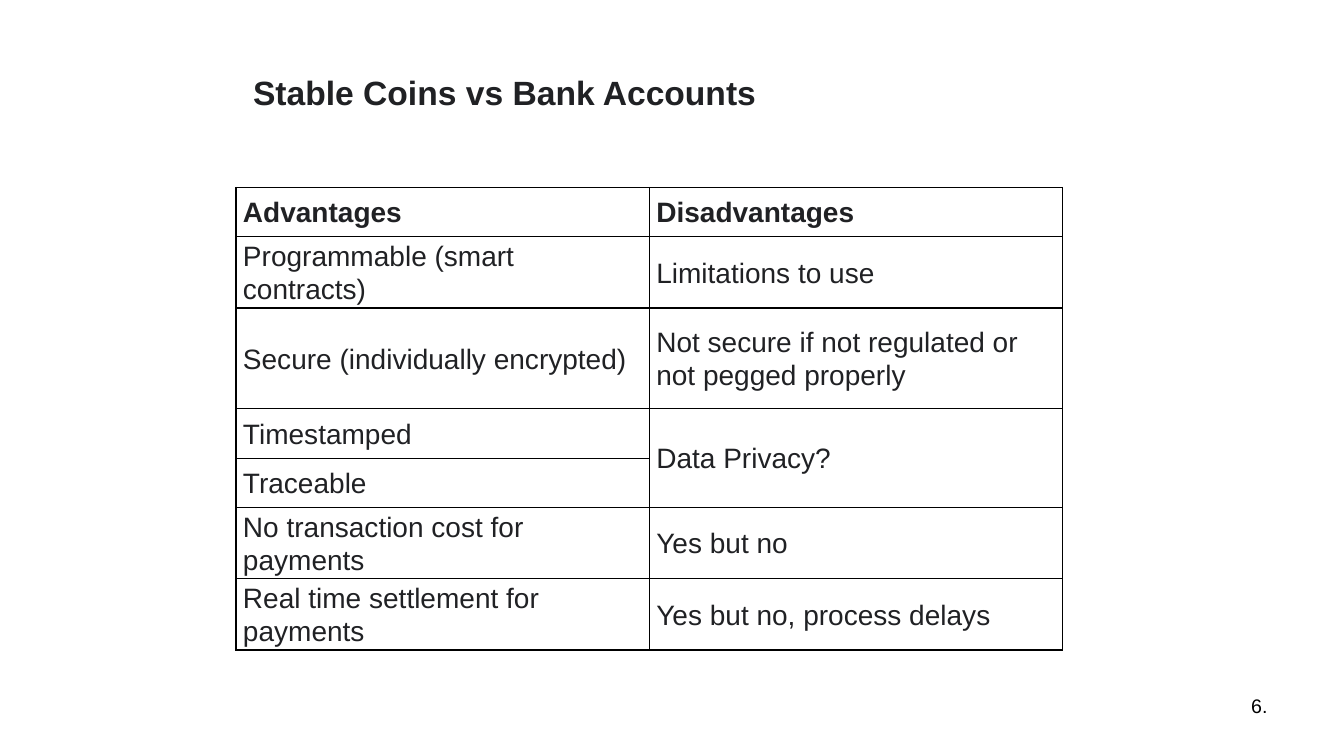
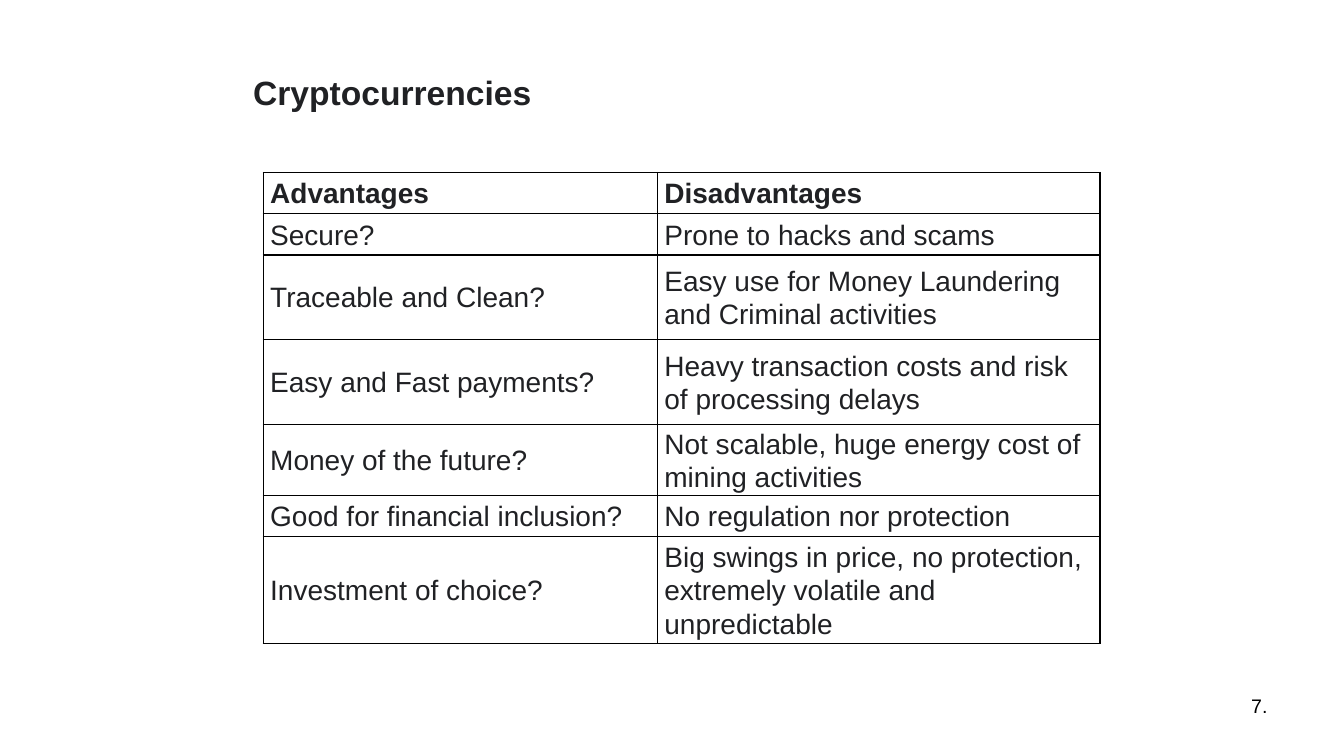
from dataclasses import dataclass

from lxml import etree
from pptx import Presentation
from pptx.dml.color import RGBColor
from pptx.enum.text import MSO_ANCHOR, PP_ALIGN
from pptx.oxml import parse_xml
from pptx.oxml.ns import nsdecls
from pptx.util import Inches, Pt


@dataclass(frozen=True)
class Theme:
    font: str = "Arial"
    ink: str = "202124"
    black: str = "000000"
    title: int = 24
    body: int = 20
    footer: int = 14
    border: int = 1


theme = Theme()

slides = [
    {
        "number": "6.",
        "title": "Stable Coins vs Bank Accounts",
        "at": (2.34, 1.86),
        "cols": (4.1, 4.1),
        "heights": (0.49, 0.49, 1, 0.49, 0.49, 0.49, 0.49),
        "merge": ((3, 1), (4, 1)),
        "rows": [
            ("Advantages", "Disadvantages"),
            ("Programmable (smart contracts)", "Limitations to use"),
            ("Secure (individually encrypted)", "Not secure if not regulated or not pegged properly"),
            ("Timestamped", "Data Privacy?"),
            ("Traceable", ""),
            ("No transaction cost for payments", "Yes but no"),
            ("Real time settlement for payments", "Yes but no, process delays"),
        ],
    },
    {
        "number": "7.",
        "title": "Cryptocurrencies",
        "at": (2.61, 1.71),
        "cols": (3.91, 4.39),
        "heights": (0.41, 0.41, 0.84, 0.84, 0.41, 0.41, 0.41),
        "merge": None,
        "rows": [
            ("Advantages", "Disadvantages"),
            ("Secure?", "Prone to hacks and scams"),
            ("Traceable and Clean?", "Easy use for Money Laundering and Criminal activities"),
            ("Easy and Fast payments?", "Heavy transaction costs and risk of processing delays"),
            ("Money of the future?", "Not scalable, huge energy cost of mining activities"),
            ("Good for financial inclusion?", "No regulation nor protection"),
            ("Investment of choice?", "Big swings in price, no protection, extremely volatile and unpredictable"),
        ],
    },
]


def set_text(tf, text, size, color, bold=False, align=PP_ALIGN.LEFT):
    tf.word_wrap = True
    p = tf.paragraphs[0]
    p.text = text
    p.alignment = align
    p.font.name = theme.font
    p.font.size = Pt(size)
    p.font.bold = bold
    p.font.color.rgb = RGBColor.from_string(color)
    return p


def add_borders(cell):
    tc_pr = cell._tc.get_or_add_tcPr()
    for side in ("lnL", "lnR", "lnT", "lnB"):
        ln = parse_xml(f'<a:{side} {nsdecls("a")} w="{Pt(theme.border)}"/>')
        fill = etree.SubElement(ln, f"{{{ln.nsmap['a']}}}solidFill")
        etree.SubElement(fill, f"{{{ln.nsmap['a']}}}srgbClr", val=theme.black)
        tc_pr.append(ln)


prs = Presentation()
prs.slide_width, prs.slide_height = Inches(13.33), Inches(7.5)

for page in slides:
    s = prs.slides.add_slide(prs.slide_layouts[5])

    title = s.shapes.title
    title.left, title.top = Inches(2.41), Inches(0.44)
    title.width, title.height = Inches(8.5), Inches(0.94)
    title.text_frame.vertical_anchor = MSO_ANCHOR.MIDDLE
    set_text(title.text_frame, page["title"], theme.title, theme.ink, bold=True)

    number = s.shapes.add_textbox(Inches(9.56), Inches(6.83), Inches(3.11), Inches(0.52))
    set_text(number.text_frame, page["number"], theme.footer, theme.black, align=PP_ALIGN.RIGHT)

    left, top = page["at"]
    table = s.shapes.add_table(
        len(page["rows"]), len(page["cols"]), Inches(left), Inches(top),
        Inches(sum(page["cols"])), Inches(sum(page["heights"])),
    ).table
    table.first_row = table.horz_banding = False
    for col, width in zip(table.columns, page["cols"]):
        col.width = Inches(width)
    for row, height in zip(table.rows, page["heights"]):
        row.height = Inches(height)

    for i, texts in enumerate(page["rows"]):
        for j, text in enumerate(texts):
            cell = table.cell(i, j)
            cell.vertical_anchor = MSO_ANCHOR.MIDDLE
            cell.margin_left = cell.margin_right = Inches(0.07)
            cell.margin_top = cell.margin_bottom = 0
            p = set_text(cell.text_frame, text, theme.body, theme.ink, bold=i == 0)
            p.line_spacing = 1.06
            p.space_after = Pt(8)
            add_borders(cell)
            cell.fill.background()

    if page["merge"]:
        first, last = page["merge"]
        table.cell(*first).merge(table.cell(*last))

prs.save("out.pptx")
